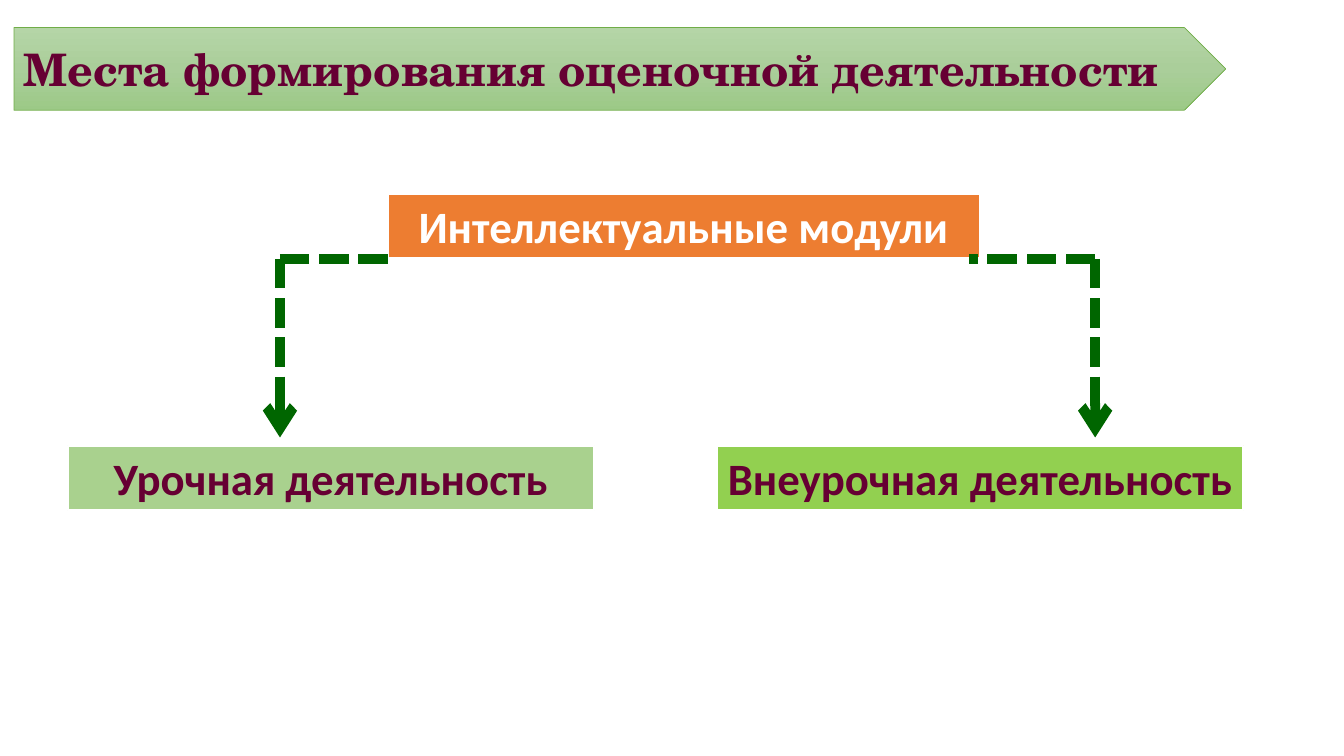
from copy import deepcopy
from dataclasses import dataclass

from lxml.etree import SubElement
from pptx import Presentation
from pptx.dml.color import RGBColor
from pptx.enum.dml import MSO_LINE
from pptx.enum.shapes import MSO_CONNECTOR as Connector, MSO_SHAPE as Shape
from pptx.enum.text import MSO_ANCHOR as Anchor, PP_ALIGN as Align
from pptx.oxml.ns import qn
from pptx.util import Pt


@dataclass(frozen=True)
class Theme:
    heading_font: str = "TeX Gyre Schola"
    label_font: str = "Calibri"
    text_size: float = 32
    wine: str = "660033"
    white: str = "FFFFFF"
    arrow: str = "006600"
    arrow_width: float = 7
    banner_line: str = "70AD47"
    banner_stops: tuple = ("B5D5A7", "AACE9A", "9CC987")


THEME = Theme()
TITLE = "Места формирования оценочной деятельности"
BANNER = (10, 19.7, 865.5, 59)

# text, left, top, width, fill, text colour
LABEL_HEIGHT = 46
LABELS = [
    ("Интеллектуальные модули", 276.8, 138.4, 423, "ED7D31", THEME.white),
    ("Урочная деятельность", 48.4, 318.4, 376, "A9D18E", THEME.wine),
    ("Внеурочная деятельность", 512.2, 318.4, 376, "92D050", THEME.wine),
]

# corner x, x of the end beside the top label
BRANCHES = [(200, 283.7), (782.3, 692)]
BRANCH_TOP, BRANCH_BOTTOM = 185, 312.5


def color(value):
    return RGBColor.from_string(value)


def add_box(page, kind, frame, text, font, text_color, line_color, line_width):
    box = page.shapes.add_shape(kind, *map(Pt, frame))
    box.shadow.inherit = False
    box.line.color.rgb = color(line_color)
    box.line.width = Pt(line_width)
    box.text_frame.word_wrap = True
    box.text_frame.text = text
    span = box.text_frame.paragraphs[0].runs[0]
    span.font.name = font
    span.font.size = Pt(THEME.text_size)
    span.font.bold = True
    span.font.color.rgb = color(text_color)
    return box


def add_label(page, text, left, top, width, fill, text_color):
    box = add_box(page, Shape.RECTANGLE, (left, top, width, LABEL_HEIGHT), text,
                  THEME.label_font, text_color, THEME.white, 1.5)
    box.fill.solid()
    box.fill.fore_color.rgb = color(fill)
    box.text_frame.vertical_anchor = Anchor.TOP
    box.text_frame.paragraphs[0].alignment = Align.CENTER


def add_banner(page):
    box = add_box(page, Shape.PENTAGON, BANNER, TITLE, THEME.heading_font,
                  THEME.wine, THEME.banner_line, 0.5)
    box.text_frame.vertical_anchor = Anchor.MIDDLE
    box.text_frame.paragraphs[0].alignment = Align.LEFT
    box.fill.gradient()
    box.fill.gradient_angle = 270
    first = box._element.spPr.find(".//" + qn("a:gs"))
    first.addnext(deepcopy(first))
    for stop, position, value in zip(box.fill.gradient_stops, (0, 0.5, 1),
                                     THEME.banner_stops):
        stop.position = position
        stop.color.rgb = color(value)


def add_dashes(page, start, end, arrowhead=False):
    line = page.shapes.add_connector(Connector.STRAIGHT, *map(Pt, start + end))
    line.line.color.rgb = color(THEME.arrow)
    line.line.width = Pt(THEME.arrow_width)
    line.line.dash_style = MSO_LINE.SQUARE_DOT
    outline = line.line._get_or_add_ln()
    outline.find(qn("a:prstDash")).set("val", "sysDash")
    if arrowhead:
        SubElement(outline, qn("a:tailEnd"), type="arrow")
    SubElement(line._element.spPr, qn("a:effectLst"))


def main():
    deck = Presentation()
    deck.slide_width, deck.slide_height = Pt(960), Pt(540)
    page = deck.slides.add_slide(deck.slide_layouts[6])
    for label in LABELS:
        add_label(page, *label)
    for corner_x, end_x in BRANCHES:
        corner = (corner_x, BRANCH_TOP)
        add_dashes(page, corner, (corner_x, BRANCH_BOTTOM), arrowhead=True)
        add_dashes(page, corner, (end_x, BRANCH_TOP))
    add_banner(page)
    deck.save("out.pptx")


if __name__ == "__main__":
    main()
